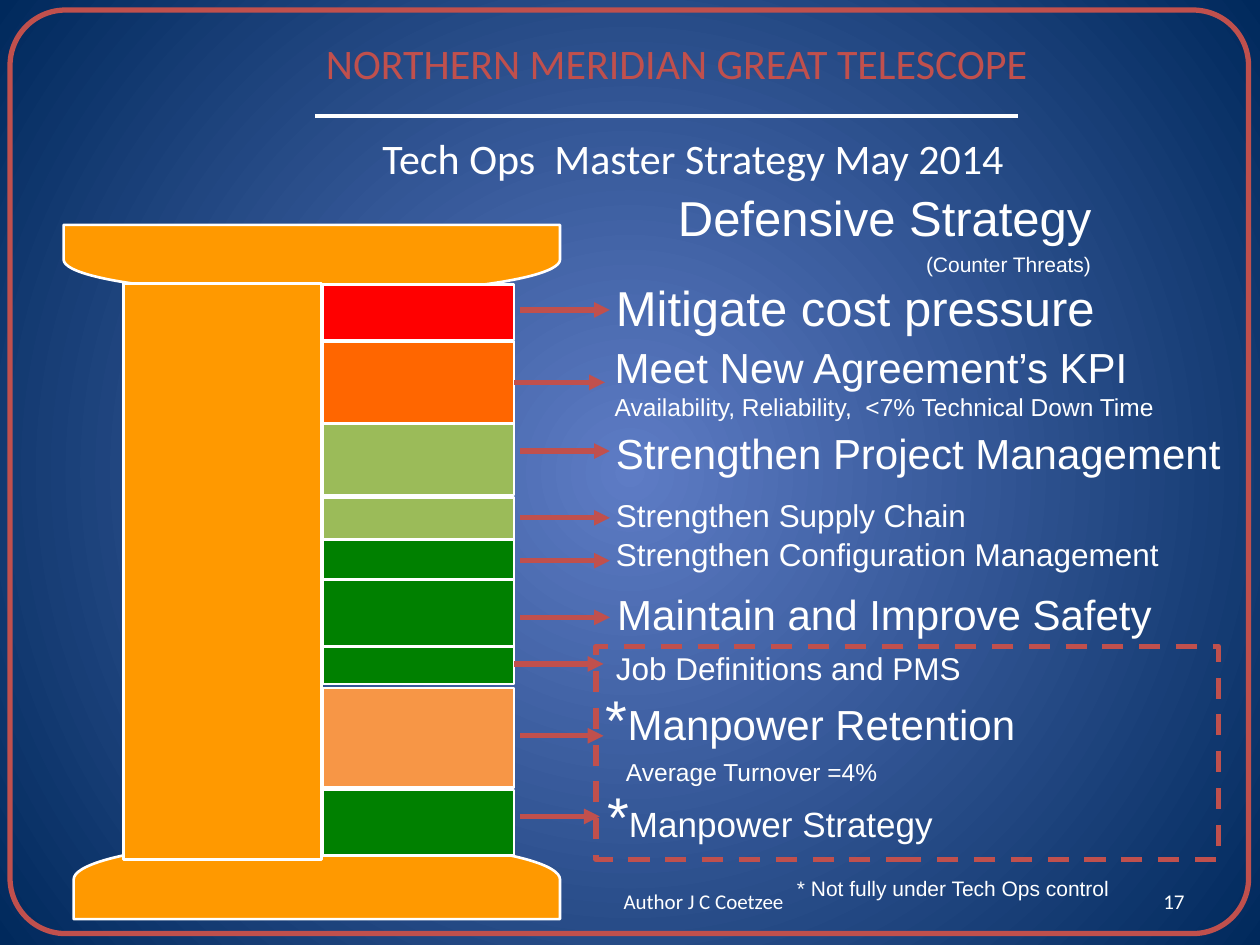
from pptx import Presentation
from pptx.dml.color import RGBColor
from pptx.enum.dml import MSO_LINE
from pptx.enum.shapes import MSO_CONNECTOR, MSO_SHAPE
from pptx.enum.text import MSO_ANCHOR, MSO_AUTO_SIZE, PP_ALIGN
from pptx.oxml.ns import qn
from pptx.oxml.xmlchemy import OxmlElement
from pptx.util import Pt

PX = 9144
WHITE = RGBColor(0xFF, 0xFF, 0xFF)
BRICK = RGBColor(0xC0, 0x50, 0x4D)
GOLD = RGBColor(0xFF, 0x99, 0x00)
RED = RGBColor(0xFF, 0x00, 0x00)
ORANGE = RGBColor(0xFF, 0x66, 0x00)
PEACH = RGBColor(0xF7, 0x96, 0x46)
OLIVE = RGBColor(0x9B, 0xBB, 0x59)
GREEN = RGBColor(0x00, 0x80, 0x00)
CENTER_BLUE = RGBColor(0x5E, 0x7C, 0xC5)
EDGE_BLUE = RGBColor(0x00, 0x29, 0x5C)

presentation = Presentation()
presentation.slide_width = 1000 * PX
presentation.slide_height = 750 * PX
slide = presentation.slides.add_slide(presentation.slide_layouts[0])

background = slide.background.fill
background.gradient()
for stop, color in zip(background.gradient_stops, (CENTER_BLUE, EDGE_BLUE)):
    stop.color.rgb = color
gradient = slide.element.find(".//" + qn("a:gradFill"))
circle = OxmlElement("a:path")
circle.set("path", "circle")
focus = OxmlElement("a:fillToRect")
for side in "ltrb":
    focus.set(side, "50000")
circle.append(focus)
gradient.replace(gradient.find(qn("a:lin")), circle)


def add_outline(kind, left, top, width, height, fill, line, weight):
    shape = slide.shapes.add_shape(kind, left * PX, top * PX, width * PX, height * PX)
    shape.shadow.inherit = False
    if fill is None:
        shape.fill.background()
    else:
        shape.fill.solid()
        shape.fill.fore_color.rgb = fill
    shape.line.color.rgb = line
    shape.line.width = Pt(weight)
    return shape


def write_text(shape, box, paragraphs, font, color, align, anchor, space):
    shape.left, shape.top, shape.width, shape.height = [length * PX for length in box]
    frame = shape.text_frame
    frame.word_wrap = True
    frame.auto_size = MSO_AUTO_SIZE.NONE
    frame.vertical_anchor = anchor
    for index, runs in enumerate(paragraphs):
        paragraph = frame.add_paragraph() if index else frame.paragraphs[0]
        paragraph.alignment = align
        if space is not None:
            paragraph.space_before = Pt(space)
        for text, size in runs:
            run = paragraph.add_run()
            run.text = text
            run.font.name = font
            run.font.size = Pt(size)
            run.font.color.rgb = color


write_text(slide.shapes.title, (183, 25, 708, 50), [[("NORTHERN MERIDIAN GREAT TELESCOPE", 24)]],
           "Calibri", BRICK, PP_ALIGN.CENTER, MSO_ANCHOR.TOP, None)
write_text(slide.placeholders[1], (200, 100, 700, 50), [[("Tech Ops  Master Strategy May 2014", 24)]],
           "Calibri", WHITE, PP_ALIGN.CENTER, MSO_ANCHOR.TOP, None)

border = add_outline(MSO_SHAPE.ROUNDED_RECTANGLE, 8, 8, 983, 733, None, BRICK, 3)
border.adjustments[0] = 0.06

for left, top, width, height, rotation in [(220, 505, 63, 386, 270), (220, 9, 55, 394, 90)]:
    cap = add_outline(MSO_SHAPE.FLOWCHART_DELAY, left, top, width, height, GOLD, WHITE, 1.5)
    cap.rotation = rotation

bands = {}
for name, top, height, color in [
    ("project", 325, 68, OLIVE),
    ("jobs", 511, 32, GREEN),
    ("supply", 395, 33, OLIVE),
    ("cost", 226, 44, RED),
    ("retention", 546, 79, PEACH),
    ("manpower", 627, 52, GREEN),
    ("safety", 460, 53, GREEN),
    ("configuration", 428, 32, GREEN),
    ("agreement", 271, 65, ORANGE),
]:
    bands[name] = add_outline(MSO_SHAPE.RECTANGLE, 256, top, 152, height, color, WHITE, 1.5)

add_outline(MSO_SHAPE.RECTANGLE, 98, 225, 157, 457, GOLD, WHITE, 1.5)

for font, align, anchor, space, box, paragraphs in [
    ("Calibri", PP_ALIGN.CENTER, MSO_ANCHOR.MIDDLE, 0, (400, 695, 317, 40), [[("Author J C Coetzee", 12)]]),
    ("Calibri", PP_ALIGN.RIGHT, MSO_ANCHOR.MIDDLE, 0, (717, 695, 233, 40), [[("17", 12)]]),
    ("Arial", PP_ALIGN.RIGHT, MSO_ANCHOR.TOP, 3, (392, 144, 484, 161),
     [[("Defensive Strategy", 28)], [("(Counter Threats)", 12)]]),
    ("Arial", PP_ALIGN.LEFT, MSO_ANCHOR.TOP, 3, (479, 215, 454, 57), [[("Mitigate cost pressure", 28)]]),
    ("Arial", PP_ALIGN.LEFT, MSO_ANCHOR.TOP, 0, (478, 266, 472, 74),
     [[("Meet New Agreement’s KPI", 24)], [("Availability, Reliability,  <7% Technical Down Time", 14)]]),
    ("Arial", PP_ALIGN.LEFT, MSO_ANCHOR.TOP, 3, (479, 334, 521, 50), [[("Strengthen Project Management", 24)]]),
    ("Arial", PP_ALIGN.LEFT, MSO_ANCHOR.TOP, 3, (479, 389, 301, 40), [[("Strengthen Supply Chain", 18)]]),
    ("Arial", PP_ALIGN.LEFT, MSO_ANCHOR.TOP, 3, (479, 420, 455, 40),
     [[("Strengthen Configuration Management", 18)]]),
    ("Arial", PP_ALIGN.LEFT, MSO_ANCHOR.TOP, 3, (480, 462, 449, 50), [[("Maintain and Improve Safety", 24)]]),
    ("Arial", PP_ALIGN.LEFT, MSO_ANCHOR.TOP, 3, (479, 510, 297, 40), [[("Job Definitions and PMS", 18)]]),
    ("Arial", PP_ALIGN.LEFT, MSO_ANCHOR.TOP, 3, (471, 538, 462, 92),
     [[("*", 32), ("Manpower Retention", 24)], [("Average Turnover =4%", 14)]]),
    ("Arial", PP_ALIGN.LEFT, MSO_ANCHOR.TOP, 3, (472, 615, 281, 64),
     [[("*", 32), ("Manpower Strategy", 20)]]),
    ("Arial", PP_ALIGN.CENTER, MSO_ANCHOR.TOP, 3, (621, 690, 271, 30),
     [[("* Not fully under Tech Ops control", 12)]]),
]:
    text_box = slide.shapes.add_textbox(0, 0, PX, PX)
    write_text(text_box, box, paragraphs, font, WHITE, align, anchor, space)
    if paragraphs[-1][0][0].startswith("Average"):
        turnover = text_box.text_frame.paragraphs[-1]
        turnover._p.get_or_add_pPr().set("marL", str(16 * PX))

control_frame = add_outline(MSO_SHAPE.RECTANGLE, 473, 513, 494, 169, None, BRICK, 3)
control_frame.line.dash_style = MSO_LINE.DASH

for start, end, y, color, weight, band in [
    (250, 808, 92, WHITE, 2, None),
    (413, 484, 246, BRICK, 3, None),
    (408, 480, 304, BRICK, 3, "agreement"),
    (413, 484, 358, BRICK, 3, None),
    (413, 484, 411, BRICK, 3, None),
    (413, 484, 445, BRICK, 3, None),
    (413, 484, 490, BRICK, 3, None),
    (408, 479, 527, BRICK, 3, "jobs"),
    (413, 479, 584, BRICK, 3, None),
    (413, 476, 648, BRICK, 3, None),
]:
    connector = slide.shapes.add_connector(MSO_CONNECTOR.STRAIGHT, start * PX, y * PX, end * PX, y * PX)
    if band:
        connector.begin_connect(bands[band], 3)
        connector.end_y = connector.begin_y
    connector.line.color.rgb = color
    connector.line.width = Pt(weight)
    if color == BRICK:
        arrowhead = OxmlElement("a:tailEnd")
        arrowhead.set("type", "triangle")
        connector.line._get_or_add_ln().append(arrowhead)
    connector._element.spPr.append(OxmlElement("a:effectLst"))

presentation.save("out.pptx")
